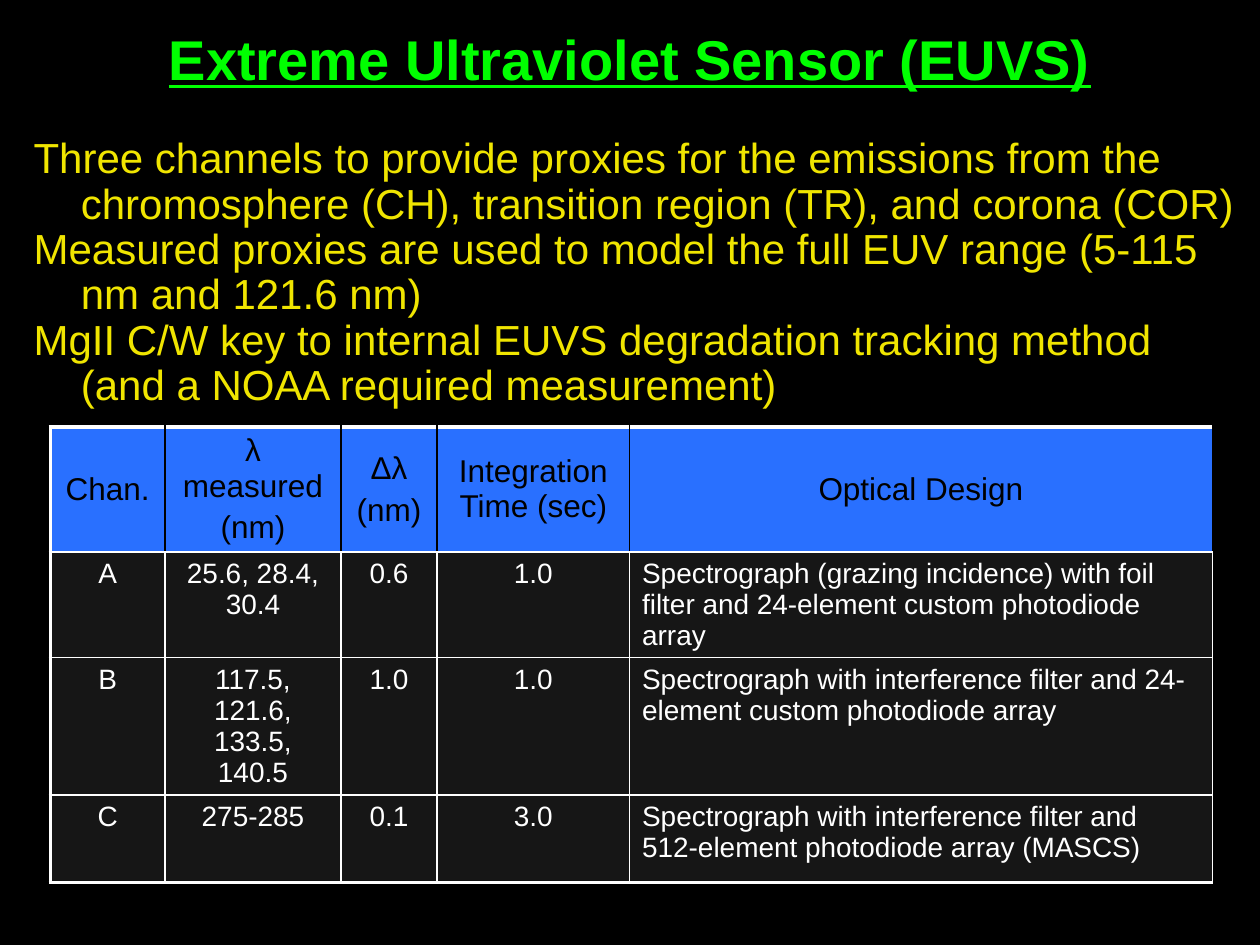
from dataclasses import dataclass

from lxml import etree
from pptx import Presentation
from pptx.dml.color import RGBColor
from pptx.enum.text import MSO_ANCHOR, MSO_AUTO_SIZE, PP_ALIGN
from pptx.oxml.ns import qn
from pptx.util import Pt

CENTER, LEFT = PP_ALIGN.CENTER, PP_ALIGN.LEFT
TOP, MIDDLE = MSO_ANCHOR.TOP, MSO_ANCHOR.MIDDLE
NO_FIT = MSO_AUTO_SIZE.NONE


@dataclass(frozen=True)
class Theme:
    """Colours, type sizes and line widths of the slide."""
    font: str = "Arial"
    background: str = "000000"
    title: str = "00FF00"
    body: str = "F0E500"
    header_fill: str = "2970FF"
    header_text: str = "000000"
    cell_fill: str = "161616"
    cell_text: str = "FFFFFF"
    border: str = "FFFFFF"
    header_divider: str = "000000"
    title_size: float = 32
    body_size: float = 24
    header_size: float = 18
    cell_size: float = 16
    thin: float = 1
    thick: float = 2.25


THEME = Theme()
TITLE = "Extreme Ultraviolet Sensor (EUVS)"
STATEMENTS = [
    "Three channels to provide proxies for the emissions from the "
    "chromosphere (CH), transition region (TR), and corona (COR)",
    "Measured proxies are used to model the full EUV range (5-115 nm and 121.6 nm)",
    "MgII C/W key to internal EUVS degradation tracking method "
    "(and a NOAA required measurement)",
]
CHANNEL_ROWS = [
    [["Chan."], ["λ measured", "(nm)"], ["Δλ", "(nm)"],
     ["Integration Time (sec)"], ["Optical Design"]],
    [["A"], ["25.6, 28.4, 30.4"], ["0.6"], ["1.0"],
     ["Spectrograph (grazing incidence) with foil filter and "
      "24-element custom photodiode array"]],
    [["B"], ["117.5, 121.6, 133.5, 140.5"], ["1.0"], ["1.0"],
     ["Spectrograph with interference filter and 24-element custom photodiode array"]],
    [["C"], ["275-285"], ["0.1"], ["3.0"],
     ["Spectrograph with interference filter and 512-element photodiode array (MASCS)"]],
]
COLUMN_WIDTHS = [65.5, 100.5, 55, 110, 333]
ROW_HEIGHTS = [70, 60, 78, 50]


def add_run(paragraph, text, size, color):
    """Add one styled run to a paragraph and return it."""
    run = paragraph.add_run()
    run.text = text
    run.font.name = THEME.font
    run.font.size = Pt(size)
    run.font.color.rgb = RGBColor.from_string(color)
    return run


def add_paragraphs(text_frame, texts):
    """Yield a paragraph with each text, reusing the empty first one."""
    for index, text in enumerate(texts):
        paragraph = text_frame.add_paragraph() if index else text_frame.paragraphs[0]
        yield paragraph, text


def place(shape, left, top, width, height):
    """Move and size a shape, in points."""
    shape.left, shape.top = Pt(left), Pt(top)
    shape.width, shape.height = Pt(width), Pt(height)


def fill_title(shape):
    """Place and write the slide title."""
    place(shape, 12, 12, 696, 42)
    frame = shape.text_frame
    frame.auto_size = NO_FIT
    frame.vertical_anchor = MIDDLE
    paragraph = frame.paragraphs[0]
    paragraph.alignment = CENTER
    run = add_run(paragraph, TITLE, THEME.title_size, THEME.title)
    run.font.bold = run.font.underline = True


def fill_body(shape):
    """Place and write the statements with a hanging indent."""
    place(shape, 12, 75, 708, 181)
    frame = shape.text_frame
    frame.auto_size = NO_FIT
    frame.vertical_anchor = TOP
    for paragraph, text in add_paragraphs(frame, STATEMENTS):
        paragraph.alignment = LEFT
        paragraph.line_spacing = 0.9
        paragraph.space_before = Pt(0)
        properties = paragraph._p.get_or_add_pPr()
        properties.set("marL", str(Pt(27)))
        properties.set("indent", str(Pt(-27)))
        etree.SubElement(properties, qn("a:buNone"))
        add_run(paragraph, text, THEME.body_size, THEME.body)


def set_border(cell, side, color, width):
    """Draw one side of a cell; sides go in the order L, R, T, B."""
    line = etree.SubElement(cell._tc.get_or_add_tcPr(), qn(f"a:ln{side}"), w=str(Pt(width)))
    fill = etree.SubElement(line, qn("a:solidFill"))
    etree.SubElement(fill, qn("a:srgbClr"), val=color)


def set_borders(cell, row, column):
    """Give a cell its borders: thick outside left, top and bottom, thin elsewhere."""
    divider = THEME.border if row else THEME.header_divider
    last_row = len(CHANNEL_ROWS) - 1
    set_border(cell, "L", divider if column else THEME.border,
               THEME.thin if column else THEME.thick)
    set_border(cell, "R", divider, THEME.thin)
    set_border(cell, "T", THEME.border, THEME.thin if row else THEME.thick)
    set_border(cell, "B", THEME.border, THEME.thick if row == last_row else THEME.thin)


def fill_cell(cell, texts, row, column):
    """Write and format one table cell."""
    if row:
        fill, color, size = THEME.cell_fill, THEME.cell_text, THEME.cell_size
    else:
        fill, color, size = THEME.header_fill, THEME.header_text, THEME.header_size
    set_borders(cell, row, column)
    cell.fill.solid()
    cell.fill.fore_color.rgb = RGBColor.from_string(fill)
    cell.vertical_anchor = TOP if row else MIDDLE
    is_description = row and column == len(COLUMN_WIDTHS) - 1
    for paragraph, text in add_paragraphs(cell.text_frame, texts):
        paragraph.alignment = LEFT if is_description else CENTER
        spacing = etree.SubElement(paragraph._p.get_or_add_pPr(), qn("a:spcBef"))
        etree.SubElement(spacing, qn("a:spcPct"), val="20000")
        add_run(paragraph, text, size, color)


def add_channel_table(slide):
    """Add the table of sensor channels."""
    frame = slide.shapes.add_table(
        len(ROW_HEIGHTS), len(COLUMN_WIDTHS), Pt(28.8), Pt(244),
        Pt(sum(COLUMN_WIDTHS)), Pt(sum(ROW_HEIGHTS)))
    table = frame.table
    table.first_row = table.horz_banding = False
    for column, width in zip(table.columns, COLUMN_WIDTHS):
        column.width = Pt(width)
    for row, height in zip(table.rows, ROW_HEIGHTS):
        row.height = Pt(height)
    for row, cells in enumerate(CHANNEL_ROWS):
        for column, texts in enumerate(cells):
            fill_cell(table.cell(row, column), texts, row, column)


def main():
    """Build and save the presentation."""
    presentation = Presentation()
    presentation.slide_width, presentation.slide_height = Pt(720), Pt(540)
    slide = presentation.slides.add_slide(presentation.slide_layouts[1])
    slide.background.fill.solid()
    slide.background.fill.fore_color.rgb = RGBColor.from_string(THEME.background)
    fill_title(slide.shapes.title)
    fill_body(slide.placeholders[1])
    add_channel_table(slide)
    presentation.save("out.pptx")


if __name__ == "__main__":
    main()
